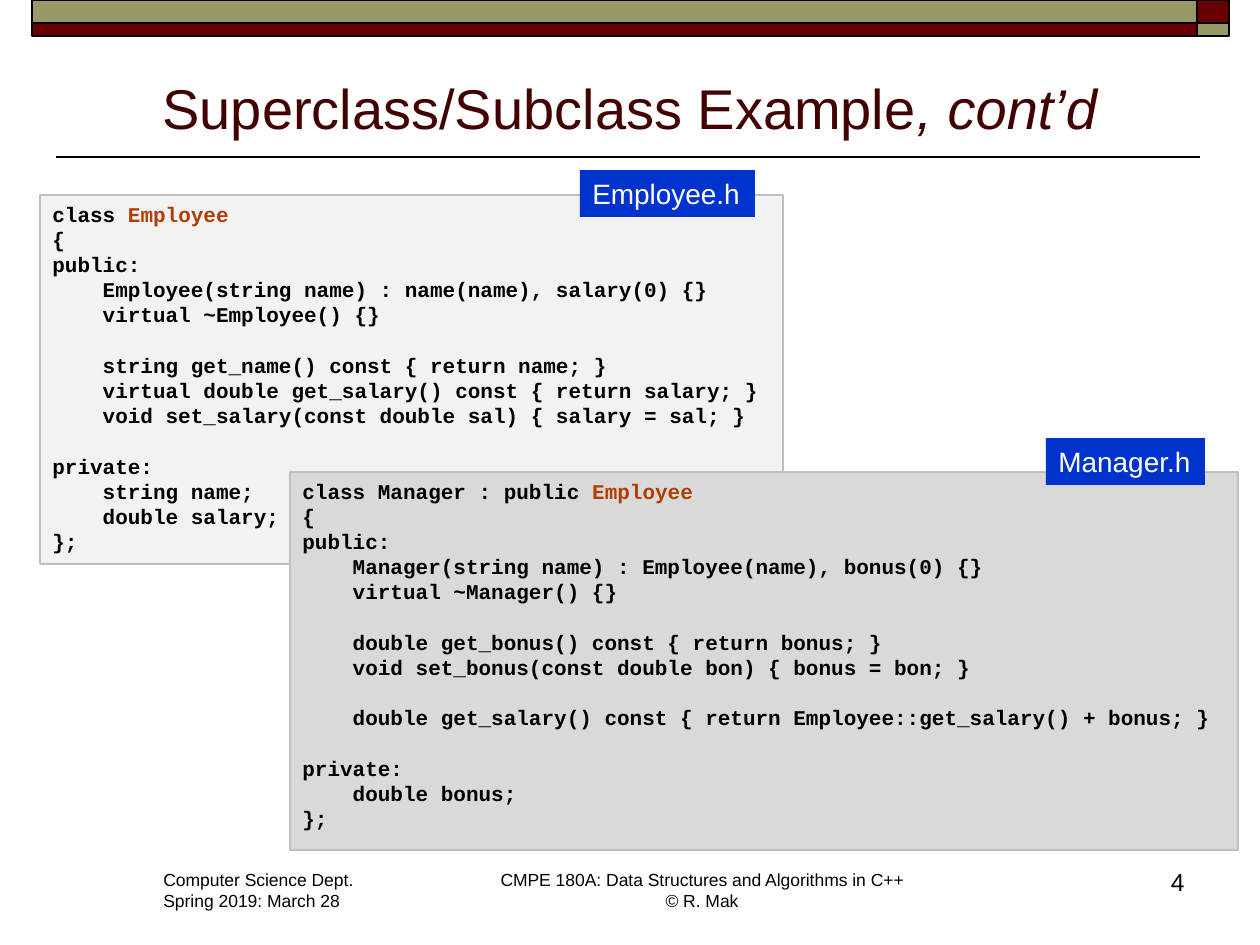
from lxml.etree import SubElement
from pptx import Presentation
from pptx.dml.color import RGBColor
from pptx.enum.shapes import MSO_CONNECTOR, MSO_SHAPE
from pptx.enum.text import MSO_ANCHOR, PP_ALIGN
from pptx.oxml.ns import qn
from pptx.util import Pt

PX = 914400 / 126  # EMU per pixel
BLACK = RGBColor(0x00, 0x00, 0x00)
WHITE = RGBColor(0xFF, 0xFF, 0xFF)
MAROON = RGBColor(0x66, 0x00, 0x00)
OLIVE = RGBColor(0x99, 0x99, 0x66)
TITLE_COLOR = RGBColor(0x42, 0x00, 0x00)
CLASS_COLOR = RGBColor(0xB2, 0x3C, 0x00)
LABEL_BLUE = RGBColor(0x00, 0x33, 0xCC)
EMPLOYEE_GRAY = RGBColor(0xF2, 0xF2, 0xF2)
MANAGER_GRAY = RGBColor(0xD9, 0xD9, 0xD9)
BORDER_GRAY = RGBColor(0xBF, 0xBF, 0xBF)

EMPLOYEE_CODE = """class Employee
{
public:
    Employee(string name) : name(name), salary(0) {}
    virtual ~Employee() {}

    string get_name() const { return name; }
    virtual double get_salary() const { return salary; }
    void set_salary(const double sal) { salary = sal; }

private:
    string name;
    double salary;
};"""

MANAGER_CODE = """class Manager : public Employee
{
public:
    Manager(string name) : Employee(name), bonus(0) {}
    virtual ~Manager() {}

    double get_bonus() const { return bonus; }
    void set_bonus(const double bon) { bonus = bon; }

    double get_salary() const { return Employee::get_salary() + bonus; }

private:
    double bonus;
};"""


def add_box(box, fill, border=None, border_width=1):
    rect = slide.shapes.add_shape(MSO_SHAPE.RECTANGLE, *(round(v * PX) for v in box))
    rect.shadow.inherit = False
    rect.fill.solid()
    rect.fill.fore_color.rgb = fill
    if border is None:
        rect.line.fill.background()
    else:
        rect.line.color.rgb = border
        rect.line.width = Pt(border_width)
    return rect


def write(frame, text, size, color=BLACK, align=PP_ALIGN.LEFT, font="Arial", bold=False):
    frame.word_wrap = True
    frame.vertical_anchor = MSO_ANCHOR.TOP
    frame.text = text
    for paragraph in frame.paragraphs:
        paragraph.alignment = align
        paragraph.font.name = font
        paragraph.font.size = Pt(size)
        paragraph.font.bold = bold
        paragraph.font.color.rgb = color


prs = Presentation()
prs.slide_width, prs.slide_height = round(1260 * PX), round(945 * PX)
slide = prs.slides.add_slide(prs.slide_layouts[5])

# Rule under the title
rule = slide.shapes.add_connector(
    MSO_CONNECTOR.STRAIGHT, *(round(v * PX) for v in (56, 157, 1200, 157)))
rule.line.color.rgb = BLACK
rule.line.width = Pt(1)
SubElement(rule._element.spPr, qn("a:effectLst"))

# Top band
for band, color in [
    ((1197, 0, 32, 23), MAROON),
    ((32, 0, 1165, 23), OLIVE),
    ((32, 23, 1165, 13), MAROON),
    ((1197, 23, 32, 13), OLIVE),
]:
    add_box(band, color, BLACK)

# Title
title = slide.shapes.title
title.left, title.top, title.width, title.height = (
    round(v * PX) for v in (63, 57, 1134, 90))
write(title.text_frame, "Superclass/Subclass Example", 32, TITLE_COLOR, PP_ALIGN.CENTER)
title.text_frame.vertical_anchor = MSO_ANCHOR.BOTTOM
continued = title.text_frame.paragraphs[0].add_run()
continued.text = ", cont’d"
continued.font.italic = True

# Footer and slide number
for box, text, size, align in [
    ((151, 863, 224, 55), "Computer Science Dept.\nSpring 2019: March 28", 10, PP_ALIGN.LEFT),
    ((485, 863, 434, 55),
     "CMPE 180A: Data Structures and Algorithms in C++\v© R. Mak", 10, PP_ALIGN.CENTER),
    ((935, 861, 262, 63), "4", 14, PP_ALIGN.RIGHT),
]:
    footer = slide.shapes.add_textbox(*(round(v * PX) for v in box))
    write(footer.text_frame, text, size, align=align)

# Code listings, with the superclass name highlighted in the first line
for box, fill, code in [
    ((40, 195, 743, 369), EMPLOYEE_GRAY, EMPLOYEE_CODE),
    ((290, 472, 948, 378), MANAGER_GRAY, MANAGER_CODE),
]:
    listing = add_box(box, fill, BORDER_GRAY, 0.75)
    write(listing.text_frame, code, 12, font="Courier New", bold=True)
    declaration = listing.text_frame.paragraphs[0]
    declaration.runs[0].text = declaration.text.removesuffix("Employee")
    superclass = declaration.add_run()
    superclass.text = "Employee"
    superclass.font.color.rgb = CLASS_COLOR

# File name labels
for box, file_name in [
    ((580, 170, 175, 47), "Employee.h"),
    ((1046, 438, 159, 47), "Manager.h"),
]:
    label = add_box(box, LABEL_BLUE)
    write(label.text_frame, file_name, 16, WHITE)

prs.save("out.pptx")
